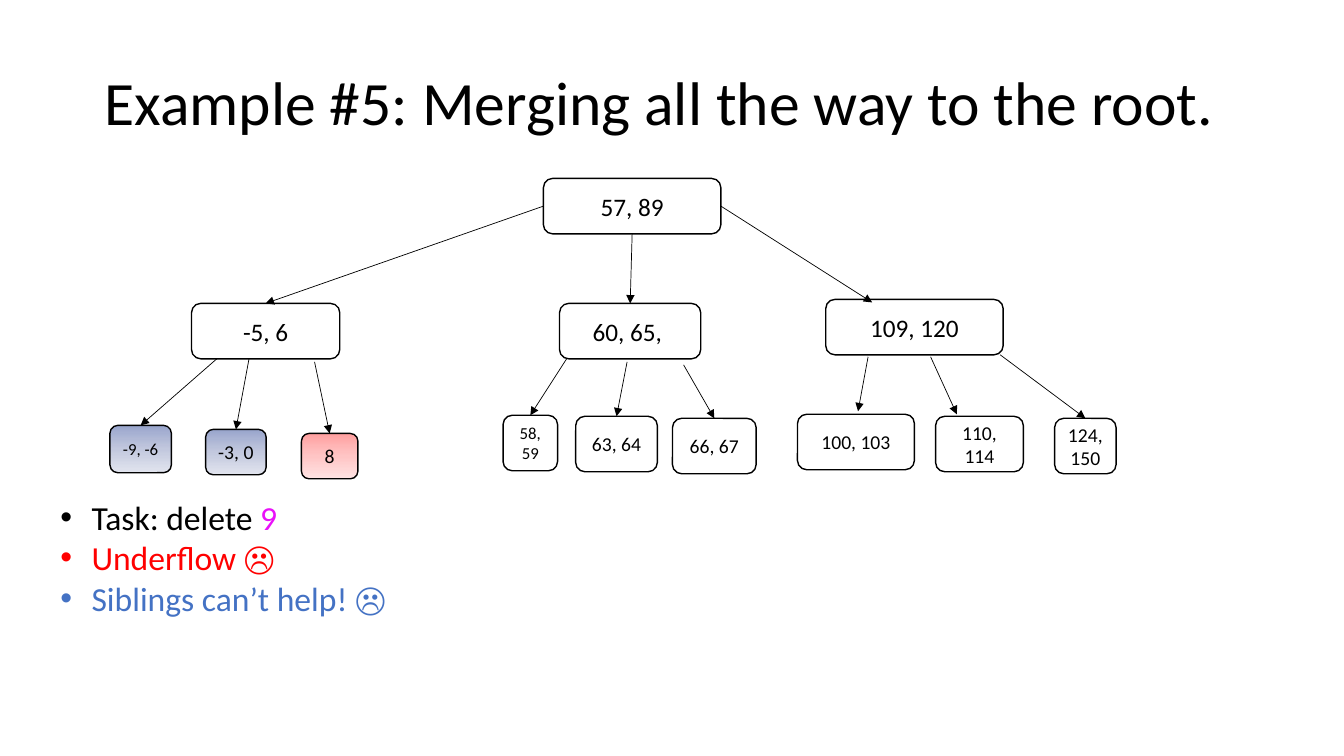
from copy import deepcopy

from pptx import Presentation
from pptx.dml.color import RGBColor
from pptx.enum.shapes import MSO_CONNECTOR as CONN, MSO_SHAPE as SHAPE
from pptx.enum.text import MSO_ANCHOR as ANCHOR, PP_ALIGN as ALIGN
from pptx.oxml.ns import qn
from pptx.oxml.xmlchemy import OxmlElement
from pptx.util import Inches, Pt

CELL = 0.1  # inches in one column or row of the grid
TOP, LEFT, BOTTOM, RIGHT = range(4)
BLACK = "000000"
BLUE = ("99A5CC", "C2C8DE", "E1E4EE")
RED = ("FFA0A0", "FFC5C5", "FFE3E3")

# name: text, column, row, columns wide, rows high, size, gradient
NODES = {
    "root": ("57, 89", 53.9, 17.7, 17.6, 5.5, 18, None),
    "low": ("-5, 6", 19, 30.1, 14.7, 5.5, 18, None),
    "mid": ("60, 65, ", 55.5, 30.1, 14, 5.5, 18, None),
    "high": ("109, 120", 81.9, 29.7, 17.6, 5.5, 18, None),
    "low1": ("-9, -6", 10.9, 42.2, 6.1, 4.7, 12, BLUE),
    "low2": ("-3, 0", 20.4, 42.6, 6, 4.5, 14, BLUE),
    "low3": ("8", 29.9, 43, 5.6, 4.5, 14, RED),
    "mid1": ("58, 59", 49.9, 41.2, 5.4, 5.5, 12, None),
    "mid2": ("63, 64", 57.1, 41.3, 8.1, 5.5, 14, None),
    "mid3": ("66, 67", 66.7, 41.5, 8.3, 5.5, 14, None),
    "high1": ("100, 103", 79.1, 41.1, 11.6, 5.5, 14, None),
    "high2": ("110, 114", 92.8, 41.3, 8.7, 5.5, 14, None),
    "high3": ("124, 150", 104.6, 41.5, 6.1, 5.5, 14, None),
}

# Each end is a (node, side) pair or a (column, row) point
EDGES = [
    (("root", LEFT), ("low", TOP)),
    (("root", BOTTOM), ("mid", TOP)),
    (("root", RIGHT), (86.5, 30)),
    ((21.5, 35.6), ("low1", TOP)),
    ((24.7, 35.6), ("low2", TOP)),
    ((31.2, 35.9), ("low3", TOP)),
    ((56.2, 35.6), ("mid1", TOP)),
    ((62.2, 35.9), ("mid2", TOP)),
    ((67.8, 36.2), ("mid3", TOP)),
    ((86.1, 35.4), (85.1, 40.8)),
    ((92.3, 35.4), (94.9, 41.1)),
    ((99.2, 35.2), ("high3", TOP)),
]

NOTES = [
    [("Task: delete ", BLACK), ("9", "E911F9")],
    [("Underflow ☹", "FF0000")],
    [("Siblings can’t help! ☹", "4472C4")],
]


def grid(*cells):
    return [Inches(n * CELL) for n in cells]


def rgb(color):
    return RGBColor.from_string(color)


def add_run(p, text, size, color=BLACK):
    r = p.add_run()
    r.text = text
    r.font.name, r.font.size = "Calibri", Pt(size)
    r.font.color.rgb = rgb(color)


def add_text(slide, *cells):
    tf = slide.shapes.add_textbox(*grid(*cells)).text_frame
    tf.word_wrap = True
    return tf


def fill_gradient(sp, colors):
    """Fill from top to bottom with three evenly spaced colours."""
    sp.fill.gradient()
    sp.fill.gradient_angle = 270
    stops = sp._element.spPr.find(".//" + qn("a:gsLst"))
    stops.insert(1, deepcopy(stops[0]))
    for i, (stop, color) in enumerate(zip(sp.fill.gradient_stops, colors)):
        stop.position = i / 2
        stop.color.rgb = rgb(color)


def add_node(slide, text, col, row, cols, rows, size, colors):
    sp = slide.shapes.add_shape(SHAPE.ROUNDED_RECTANGLE, *grid(col, row, cols, rows))
    sp.shadow.inherit = False
    if colors:
        fill_gradient(sp, colors)
    else:
        sp.fill.background()
    sp.line.color.rgb, sp.line.width = rgb(BLACK), Pt(1)
    tf = sp.text_frame
    tf.word_wrap = True
    tf.vertical_anchor = ANCHOR.MIDDLE
    p = tf.paragraphs[0]
    p.alignment = ALIGN.CENTER
    add_run(p, text, size)
    return sp


def add_edge(slide, nodes, start, end):
    points = [(0, 0) if e[0] in nodes else e for e in (start, end)]
    line = slide.shapes.add_connector(CONN.STRAIGHT, *grid(*points[0], *points[1]))
    for target, connect in ((start, line.begin_connect), (end, line.end_connect)):
        if target[0] in nodes:
            connect(nodes[target[0]], target[1])
    line.line.color.rgb, line.line.width = rgb(BLACK), Pt(0.5)
    head = OxmlElement("a:tailEnd")
    head.set("type", "triangle")
    line.line._get_or_add_ln().append(head)
    line._element.spPr.append(OxmlElement("a:effectLst"))


def add_bullet(p, indent):
    pPr = p._p.get_or_add_pPr()
    pPr.set("marL", str(indent))
    pPr.set("indent", str(-indent))
    font = OxmlElement("a:buFont")
    font.set("typeface", "Arial")
    bullet = OxmlElement("a:buChar")
    bullet.set("char", "•")
    pPr.extend([font, bullet])


def add_title(slide, text):
    tf = add_text(slide, 7.9, 3.2, 115, 14.5)
    tf.vertical_anchor = ANCHOR.MIDDLE
    p = tf.paragraphs[0]
    p.alignment, p.line_spacing = ALIGN.CENTER, 0.9
    add_run(p, text, 44)


def add_notes(slide):
    tf = add_text(slide, 5, 48.8, 120, 17.2)
    for i, runs in enumerate(NOTES):
        p = tf.add_paragraph() if i else tf.paragraphs[0]
        add_bullet(p, Inches(0.31))
        for text, color in runs:
            add_run(p, text, 24, color)


def main():
    prs = Presentation()
    prs.slide_width, prs.slide_height = Inches(13.33), Inches(7.5)
    slide = prs.slides.add_slide(prs.slide_layouts[6])
    add_title(slide, "Example #5: Merging all the way to the root.")
    nodes = {name: add_node(slide, *node) for name, node in NODES.items()}
    for start, end in EDGES:
        add_edge(slide, nodes, start, end)
    add_notes(slide)
    prs.save("out.pptx")


if __name__ == "__main__":
    main()
